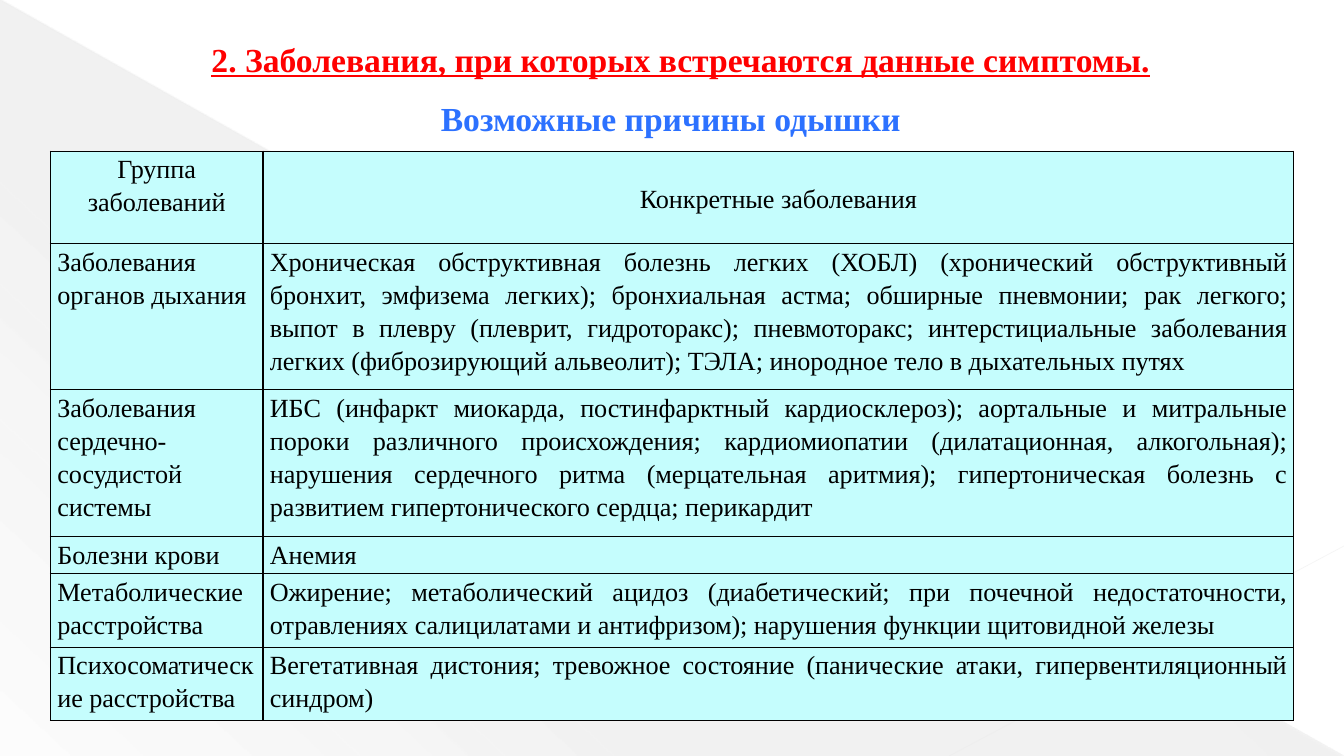
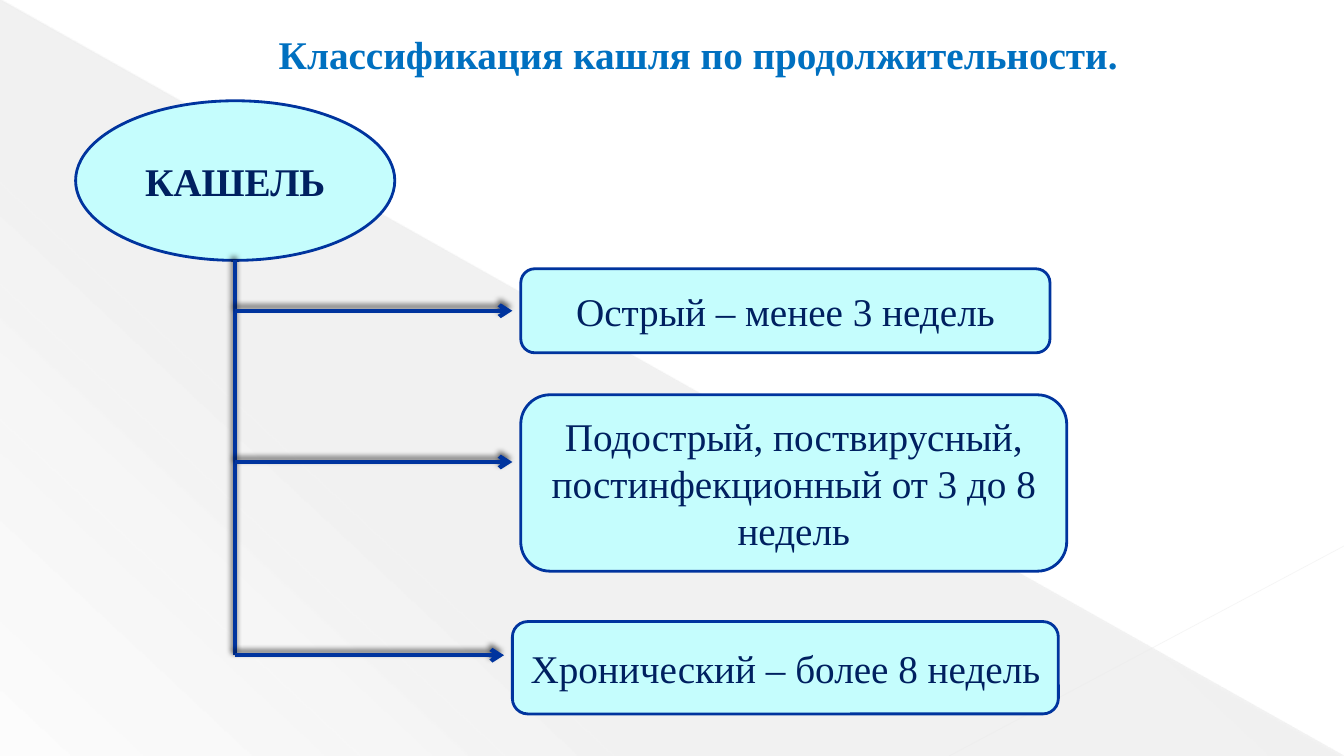
from dataclasses import dataclass

from lxml.etree import SubElement
from pptx import Presentation
from pptx.dml.color import RGBColor
from pptx.enum.shapes import MSO_CONNECTOR, MSO_SHAPE
from pptx.enum.text import MSO_ANCHOR, PP_ALIGN
from pptx.oxml import parse_xml
from pptx.oxml.ns import nsdecls, qn
from pptx.util import Emu, Inches, Pt

# The slide is a grid of square cells, twelve to the inch
COLUMNS, ROWS = 160, 90
CELL = Inches(1) / 12


def grid(cells):
    return Emu(round(cells * CELL))


@dataclass(frozen=True)
class Theme:
    font: str = "Times New Roman"
    heading: str = "FF0000"
    subheading: str = "2C71FF"
    title: str = "0070C0"
    panel: str = "C5FDFD"
    outline: str = "00349E"
    label: str = "002060"
    ink: str = "000000"
    backdrop: str = "666666"
    diagonal: str = "E8E8E8"
    corner: str = "EAEAEA"
    large: float = 28
    medium: float = 24
    small: float = 18.67
    outline_width: float = 2
    arrow_width: float = 3


class Deck:
    def __init__(self, theme):
        self.theme = theme
        self.presentation = Presentation()
        self.presentation.slide_width = grid(COLUMNS)
        self.presentation.slide_height = grid(ROWS)
        self.slide = None

    def add_slide(self):
        self.slide = self.presentation.slides.add_slide(self.presentation.slide_layouts[6])

    # Shared backdrop: built on the current slide, then moved to the master
    def backdrop(self):
        theme = self.theme
        triangle = self.slide.shapes.add_shape(
            MSO_SHAPE.RIGHT_TRIANGLE, 0, 0, grid(COLUMNS), grid(ROWS))
        triangle.shadow.inherit = False
        triangle.line.fill.background()
        triangle.fill.background()
        stops = "".join(
            f'<a:gs pos="{position}000"><a:srgbClr val="{theme.backdrop}">'
            f'<a:alpha val="{opacity}000"/></a:srgbClr></a:gs>'
            for position, opacity in ((0, 10), (70, 8), (100, 1)))
        properties = triangle.element.spPr
        properties.replace(properties.find(qn("a:noFill")), parse_xml(
            f'<a:gradFill {nsdecls("a")} rotWithShape="1"><a:gsLst>{stops}</a:gsLst>'
            f'<a:lin ang="{133 * 60000}" scaled="0"/></a:gradFill>'))
        diagonal = self.line((0, 0), (COLUMNS, ROWS), theme.diagonal, 0.39, opacity=35)
        corner = self.line((COLUMNS, 65), (113, ROWS), theme.corner, 0.47, opacity=45)
        master_tree = self.presentation.slide_master.shapes.element
        for number, shape in enumerate((triangle, diagonal, corner), start=101):
            shape.element.xpath("./*/p:cNvPr")[0].set("id", str(number))
            master_tree.append(shape.element)

    def set_text(self, text_frame, text, size, color, align, bold=False, underline=False):
        text_frame.text = text
        paragraph = text_frame.paragraphs[0]
        paragraph.alignment = align
        font = paragraph.runs[0].font
        font.name, font.size = self.theme.font, Pt(size)
        font.bold, font.underline = bold, underline
        font.color.rgb = RGBColor.from_string(color)
        return paragraph

    def title(self, box, text, size, color, align, underline=False, wrap=True):
        shape = self.slide.shapes.add_textbox(*map(grid, box))
        shape.text_frame.word_wrap = wrap
        shape.text_frame.vertical_anchor = MSO_ANCHOR.MIDDLE
        self.set_text(shape.text_frame, text, size, color, align, True, underline)

    def panel(self, kind, box, text, bold=False):
        shape = self.slide.shapes.add_shape(kind, *map(grid, box))
        shape.shadow.inherit = False
        shape.fill.solid()
        shape.fill.fore_color.rgb = RGBColor.from_string(self.theme.panel)
        shape.line.color.rgb = RGBColor.from_string(self.theme.outline)
        shape.line.width = Pt(self.theme.outline_width)
        shape.text_frame.word_wrap = True
        shape.text_frame.vertical_anchor = MSO_ANCHOR.MIDDLE
        self.set_text(shape.text_frame, text, self.theme.large, self.theme.label,
                      PP_ALIGN.CENTER, bold)

    def line(self, start, end, color, width, opacity=100):
        connector = self.slide.shapes.add_connector(
            MSO_CONNECTOR.STRAIGHT, *map(grid, start + end))
        connector.line.color.rgb = RGBColor.from_string(color)
        connector.line.width = Pt(width)
        properties = connector.element.spPr
        if opacity < 100:
            color_element = properties.xpath("./a:ln/a:solidFill/a:srgbClr")[0]
            SubElement(color_element, qn("a:alpha")).set("val", str(opacity * 1000))
        SubElement(properties, qn("a:effectLst"))
        return connector

    # Heavy line with a soft shadow, with or without an arrowhead
    def branch(self, start, end, arrow=True):
        connector = self.line(start, end, self.theme.outline, self.theme.arrow_width)
        properties = connector.element.spPr
        if arrow:
            SubElement(properties.find(qn("a:ln")), qn("a:tailEnd")).set("type", "arrow")
        properties.find(qn("a:effectLst")).append(parse_xml(
            f'<a:outerShdw {nsdecls("a")} blurRad="{Pt(4)}" dist="{Pt(3)}" '
            f'dir="{245 * 60000}" algn="tl" rotWithShape="0">'
            f'<a:srgbClr val="{self.theme.ink}"><a:alpha val="60000"/></a:srgbClr>'
            '</a:outerShdw>'))

    def table(self, left, top, widths, heights, records):
        frame = self.slide.shapes.add_table(
            len(heights), len(widths), grid(left), grid(top),
            grid(sum(widths)), grid(sum(heights)))
        table = frame.table
        table.first_row = table.horz_banding = False
        for column, width in zip(table.columns, widths):
            column.width = grid(width)
        for row, height, record in zip(table.rows, heights, records):
            row.height = grid(height)
            header = record is records[0]
            for cell, text in zip(row.cells, record):
                self.cell(cell, text, PP_ALIGN.CENTER if header else PP_ALIGN.JUSTIFY)
        table.cell(0, 1).vertical_anchor = MSO_ANCHOR.MIDDLE

    def cell(self, cell, text, align):
        paragraph = self.set_text(cell.text_frame, text, self.theme.small, self.theme.ink, align)
        paragraph.line_spacing = 1.15
        cell.margin_left = cell.margin_right = Inches(0.07)
        cell.margin_top = cell.margin_bottom = 0
        properties = cell._tc.get_or_add_tcPr()
        for side in "LRTB":
            properties.append(parse_xml(
                f'<a:ln{side} {nsdecls("a")} w="{Pt(1)}"><a:solidFill>'
                f'<a:srgbClr val="{self.theme.ink}"/></a:solidFill></a:ln{side}>'))
        cell.fill.solid()
        cell.fill.fore_color.rgb = RGBColor.from_string(self.theme.panel)


DYSPNEA_CAUSES = [
    ("Группа заболеваний", "Конкретные заболевания"),
    ("Заболевания органов дыхания",
     "Хроническая обструктивная болезнь легких (ХОБЛ) (хронический обструктивный бронхит, "
     "эмфизема легких); бронхиальная астма; обширные пневмонии; рак легкого; выпот в плевру "
     "(плеврит, гидроторакс); пневмоторакс; интерстициальные заболевания легких "
     "(фиброзирующий альвеолит); ТЭЛА; инородное тело в дыхательных путях"),
    ("Заболевания сердечно-сосудистой системы",
     "ИБС (инфаркт миокарда, постинфарктный кардиосклероз); аортальные и митральные пороки "
     "различного происхождения; кардиомиопатии (дилатационная, алкогольная); нарушения "
     "сердечного ритма (мерцательная аритмия); гипертоническая болезнь с развитием "
     "гипертонического сердца; перикардит"),
    ("Болезни крови", "Анемия"),
    ("Метаболические расстройства",
     "Ожирение; метаболический ацидоз (диабетический; при почечной недостаточности, "
     "отравлениях салицилатами и антифризом); нарушения функции щитовидной железы"),
    ("Психосоматические расстройства",
     "Вегетативная дистония; тревожное состояние (панические атаки, гипервентиляционный "
     "синдром)"),
]

# Each type of cough: its box and the row of the arrow that points to it
COUGH_TYPES = [
    ("Острый – менее 3 недель", (62, 32, 63, 10), 37),
    ("Подострый, поствирусный, постинфекционный от 3 до 8 недель", (62, 47, 65, 21), 55),
    ("Хронический – более 8 недель", (61, 74, 65, 11), 78),
]


def dyspnea_slide(deck):
    theme = deck.theme
    deck.title((24, 4, 121, 6), "2. Заболевания, при которых встречаются данные симптомы.",
               theme.medium, theme.heading, PP_ALIGN.JUSTIFY, underline=True)
    deck.table(6, 18, (25.3, 122.7), (11, 17.4, 17.5, 4.4, 8.75, 8.75), DYSPNEA_CAUSES)
    deck.title((51, 11, 57.7, 6), "Возможные причины одышки",
               theme.medium, theme.subheading, PP_ALIGN.CENTER, wrap=False)


def cough_slide(deck):
    theme = deck.theme
    deck.title((32, 3, 106, 6.8), "Классификация кашля по продолжительности.",
               theme.large, theme.title, PP_ALIGN.LEFT)
    left, top, width, height = root = (9, 12, 38, 19)
    deck.panel(MSO_SHAPE.OVAL, root, "КАШЕЛЬ", bold=True)
    trunk = left + width / 2
    deck.branch((trunk, top + height), (trunk, COUGH_TYPES[-1][2]), arrow=False)
    for text, box, arrow_row in COUGH_TYPES:
        deck.branch((trunk, arrow_row), (box[0] - 1, arrow_row))
        deck.panel(MSO_SHAPE.ROUNDED_RECTANGLE, box, text)


def main():
    deck = Deck(Theme())
    deck.add_slide()
    deck.backdrop()
    dyspnea_slide(deck)
    deck.add_slide()
    cough_slide(deck)
    deck.presentation.save("out.pptx")


if __name__ == "__main__":
    main()
